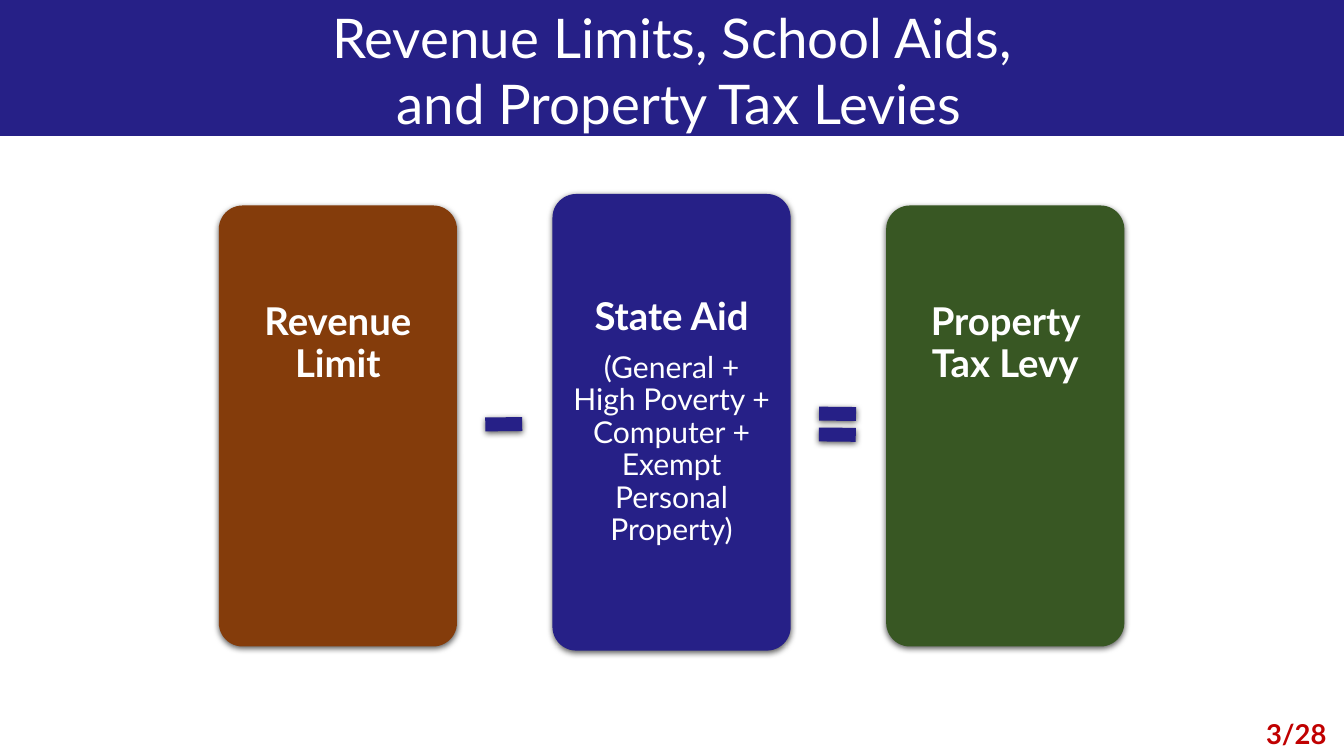
"""Build the slide on revenue limits, school aids and property tax levies."""
import dataclasses

import lxml.etree
import pptx
import pptx.dml.color
import pptx.enum.shapes
import pptx.enum.text
import pptx.oxml.ns
import pptx.util

Pt = pptx.util.Pt
SHAPE = pptx.enum.shapes.MSO_SHAPE
ANCHOR = pptx.enum.text.MSO_ANCHOR
CENTER = pptx.enum.text.PP_ALIGN.CENTER


@dataclasses.dataclass(frozen=True)
class Theme:
    """Hold the colours, font and type sizes."""
    font: str = "Lato"
    blue: str = "262087"
    brown: str = "843C0B"
    green: str = "385723"
    red: str = "C00000"
    white: str = "FFFFFF"
    shadow: str = "000000"
    title: int = 40
    heading: int = 28
    detail: int = 22
    number: int = 20


class SlideBuilder:
    """Draw styled elements on the current slide."""

    def __init__(self, slide, theme):
        """Keep the slide and the theme."""
        self.s = slide
        self.theme = theme

    def rgb(self, color):
        """Return a colour object."""
        return pptx.dml.color.RGBColor.from_string(color)

    def apply(self, obj, formats):
        """Set attributes from a dict of format values."""
        for name, value in formats.items():
            setattr(obj, name, value)

    def add_shadow(self, parent, blur, dist, angle, alpha):
        """Append an outer shadow to an effect list."""
        qn = pptx.oxml.ns.qn
        sh = lxml.etree.SubElement(parent, qn("a:outerShdw"), {
            "blurRad": str(Pt(blur)), "dist": str(Pt(dist)),
            "dir": str(angle * 60000), "algn": "ctr", "rotWithShape": "0"})
        clr = lxml.etree.SubElement(sh, qn("a:srgbClr"), val=self.theme.shadow)
        lxml.etree.SubElement(clr, qn("a:alpha"), val=str(alpha * 1000))

    def shape(self, kind, left, top, width, height, color, shadow=True):
        """Add a filled preset shape without an outline."""
        sp = self.s.shapes.add_shape(kind, Pt(left), Pt(top), Pt(width), Pt(height))
        sp.shadow.inherit = False
        sp.fill.solid()
        sp.fill.fore_color.rgb = self.rgb(color)
        sp.line.fill.background()
        if shadow:
            effects = sp._element.spPr.find(pptx.oxml.ns.qn("a:effectLst"))
            self.add_shadow(effects, 4.5, 1.5, 90, 63)
        return sp

    def text(self, p, text, size, color, bold=False, **formats):
        """Fill a centred paragraph with one style of text."""
        p.text = text
        self.apply(p, {"alignment": CENTER, **formats})
        for r in p.runs:
            self.apply(r.font, {"name": self.theme.font, "size": Pt(size), "bold": bold})
            r.font.color.rgb = self.rgb(color)

    def title(self, text, width, height):
        """Place the title placeholder and give its text a shadow."""
        sp = self.s.shapes.title
        self.apply(sp, {"left": 0, "top": 0, "width": Pt(width), "height": Pt(height)})
        tf = sp.text_frame
        self.apply(tf, {"auto_size": pptx.enum.text.MSO_AUTO_SIZE.NONE,
                        "vertical_anchor": ANCHOR.MIDDLE, "word_wrap": True})
        p = tf.paragraphs[0]
        self.text(p, text, self.theme.title, self.theme.white, space_after=Pt(6))
        qn = pptx.oxml.ns.qn
        for r in p.runs:
            effects = lxml.etree.Element(qn("a:effectLst"))
            self.add_shadow(effects, 3, 3, 45, 43)
            r.font._element.find(qn("a:latin")).addprevious(effects)

    def card(self, left, top, width, height, color, paragraphs, inset, anchor):
        """Add a rounded card with a heading and optional detail."""
        sp = self.shape(SHAPE.ROUNDED_RECTANGLE, left, top, width, height, color)
        sp.adjustments[0] = 0.1
        tf = sp.text_frame
        self.apply(tf, {"word_wrap": True, "vertical_anchor": anchor,
                        "margin_left": Pt(8.6), "margin_right": Pt(8.6),
                        "margin_top": Pt(inset), "margin_bottom": Pt(8.6)})
        for i, (text, size, bold) in enumerate(paragraphs):
            p = tf.add_paragraph() if i else tf.paragraphs[0]
            self.text(p, text, size, self.theme.white, bold,
                      line_spacing=0.9, space_after=Pt(size * 0.35))

    def operator(self, kind, left, rotation):
        """Add a sign between two cards."""
        sp = self.shape(kind, left, 288.7, 36.7, 43.2, self.theme.blue)
        sp.rotation = rotation

    def page_number(self, text, left, top, width, height):
        """Add the page number."""
        sp = self.s.shapes.add_textbox(Pt(left), Pt(top), Pt(width), Pt(height))
        sp.text_frame.word_wrap = True
        self.text(sp.text_frame.paragraphs[0], text, self.theme.number, self.theme.red, True)


def main():
    """Create and save the presentation."""
    theme = Theme()
    prs = pptx.Presentation()
    prs.slide_width, prs.slide_height = Pt(982.8), Pt(553)
    s = SlideBuilder(prs.slides.add_slide(prs.slide_layouts[5]), theme)

    band = s.shape(SHAPE.RECTANGLE, 0, 0, 982.8, 99.4, theme.blue, shadow=False)
    title = s.s.shapes.title._element
    title.addprevious(band._element)
    s.title("Revenue Limits, School Aids,\v and Property Tax Levies", 982.8, 101.5)

    detail = "(General + High Poverty + Computer + Exempt Personal Property)"
    cards = [
        (150.3, 322.6, theme.brown, [("Revenue Limit", theme.heading, True)], 66, ANCHOR.TOP),
        (141.9, 334, theme.blue, [("State Aid", theme.heading, True),
                                  (detail, theme.detail, False)], 8.6, ANCHOR.MIDDLE),
        (150.3, 322.6, theme.green, [("Property Tax Levy", theme.heading, True)], 66, ANCHOR.TOP),
    ]
    first, step, width = 160, 244, 174.2
    for i, (top, height, color, paragraphs, inset, anchor) in enumerate(cards):
        s.card(first + i * step, top, width, height, color, paragraphs, inset, anchor)

    signs = [(SHAPE.MATH_MINUS, 179.4), (SHAPE.MATH_EQUAL, 180.6)]
    for i, (kind, rotation) in enumerate(signs):
        s.operator(kind, 350 + i * step, rotation)

    s.page_number("3/28", 913, 521.3, 69.8, 31.7)
    prs.save("out.pptx")


if __name__ == "__main__":
    main()
